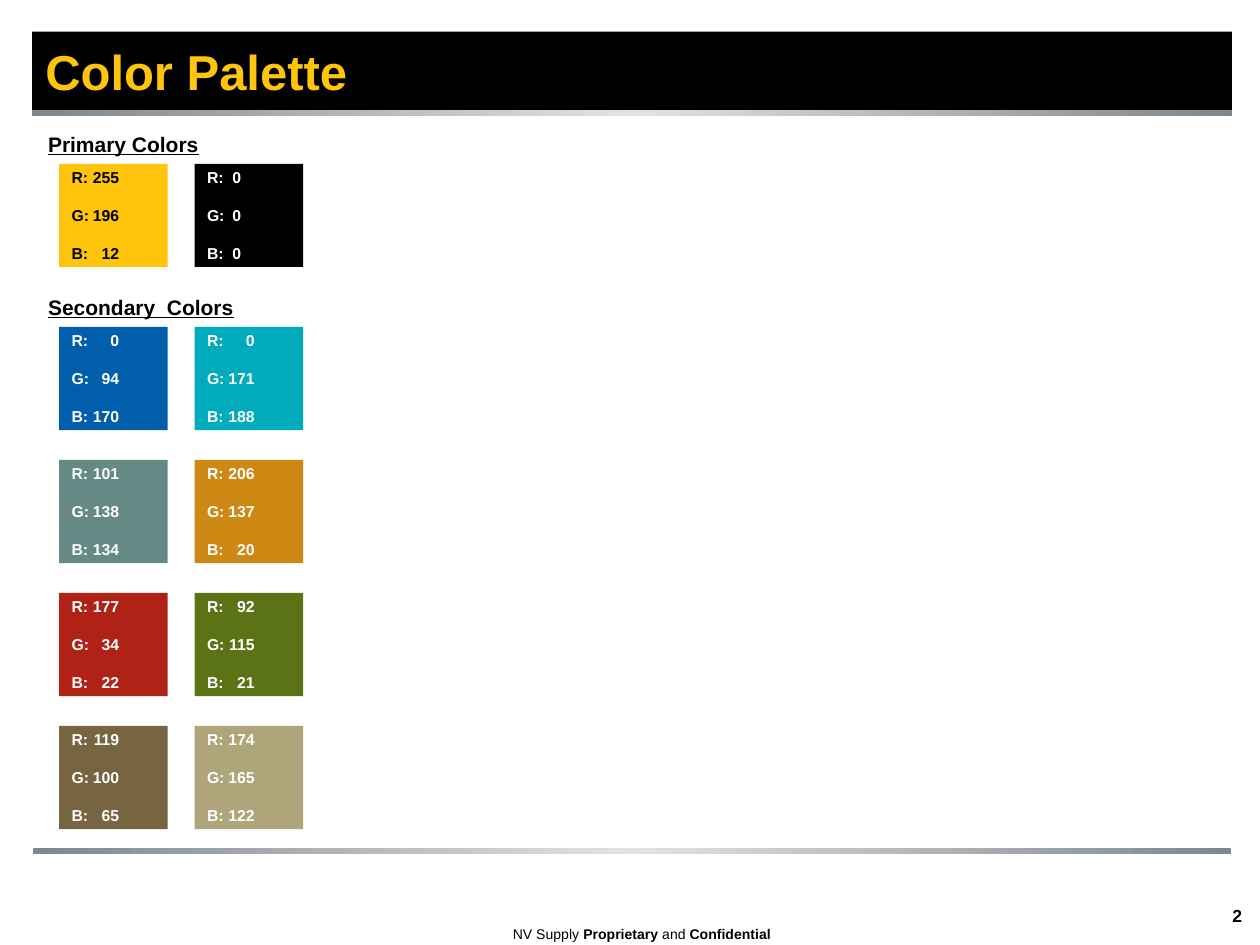
from copy import deepcopy

from lxml import etree
from pptx import Presentation
from pptx import util as u
from pptx.dml.color import RGBColor
from pptx.enum import shapes, text
from pptx.oxml.ns import qn

Pt = u.Pt
ALIGN, ANCHOR = text.PP_ALIGN, text.MSO_ANCHOR
YELLOW, BLACK, WHITE = "FFC40C", "000000", "FFFFFF"
SWATCH_WIDTH, SWATCH_HEIGHT = 62, 59
COLUMN_STEP, ROW_STEP = 77.4, 76

PRIMARY = [[YELLOW, BLACK]]
SECONDARY = [
    ["005EAA", "00ABBC"],
    ["658A86", "CE8914"],
    ["B12216", "5C7315"],
    ["776441", "AEA57A"],
]


def color(value):
    return RGBColor.from_string(value)


def add_span(para, content, size, ink=BLACK, bold=False, underline=False):
    span = para.add_run()
    span.text = content
    font = span.font
    font.name, font.size, font.bold = "Arial", Pt(size), bold
    font.underline = underline
    font.color.rgb = color(ink)


def add_box(page, left, top, width, height, align=ALIGN.LEFT, wrap=False):
    """Add a text box and return its first paragraph."""
    box = page.shapes.add_textbox(Pt(left), Pt(top), Pt(width), Pt(height))
    box.text_frame.word_wrap = wrap
    para = box.text_frame.paragraphs[0]
    para.alignment = align
    return para


def add_block(page, left, top, width, height, fill):
    block = page.shapes.add_shape(
        shapes.MSO_SHAPE.RECTANGLE, Pt(left), Pt(top), Pt(width), Pt(height))
    block.shadow.inherit = False
    block.line.fill.background()
    block.fill.solid()
    block.fill.fore_color.rgb = color(fill)
    return block


def add_silver_rule(page, left, top, width, height):
    rule = add_block(page, left, top, width, height, WHITE)
    rule.fill.gradient()
    rule.fill.gradient_angle = 0
    first, last = rule.fill.gradient_stops
    for stop, position in ((first, 0), (last, 1)):
        stop.color.rgb = color("7E878E")
        stop.position = position
    stops = rule.element.spPr.find(".//" + qn("a:gsLst"))
    middle = deepcopy(stops[0])
    middle.set("pos", "50000")
    middle.find(qn("a:srgbClr")).set("val", "E1E2E3")
    stops.insert(1, middle)


def add_header(page, left, top, width, height):
    add_block(page, left, top, width, height, BLACK)
    add_silver_rule(page, left, top + height - 0.5, width, 3.6)
    title = page.shapes.title
    title.element.getparent().append(title.element)
    title.left, title.top = Pt(left + 0.3), Pt(top)
    title.width, title.height = Pt(525), Pt(height)
    frame = title.text_frame
    frame.vertical_anchor = ANCHOR.MIDDLE
    para = frame.paragraphs[0]
    para.alignment = ALIGN.LEFT
    add_span(para, "Color Palette", 28, YELLOW, bold=True)


def add_footer(page, left, top, width):
    add_silver_rule(page, left, top, width, 3.6)
    number = add_box(page, left + 530, top + 29.2, 168, 25, ALIGN.RIGHT, wrap=True)
    add_span(number, "2", 10, bold=True)
    notice = add_box(page, left + 267, top + 42.5, 162, 15, ALIGN.CENTER)
    notice.line_spacing = 0.85
    for content, bold in (("NV Supply ", False), ("Proprietary", True),
                          (" and ", False), ("Confidential", True)):
        add_span(notice, content, 8, bold=bold)


def add_swatch(page, left, top, fill):
    """Add a colour block that lists its own red, green and blue values."""
    swatch = add_block(page, left, top, SWATCH_WIDTH, SWATCH_HEIGHT, fill)
    frame = swatch.text_frame
    frame.word_wrap = True
    frame.vertical_anchor = ANCHOR.MIDDLE
    frame.margin_top = frame.margin_bottom = 0
    ink = BLACK if fill == YELLOW else WHITE
    number_edge = 19.5 if fill == BLACK else 27.2
    for index, (channel, value) in enumerate(zip("RGB", color(fill))):
        para = frame.add_paragraph() if index else frame.paragraphs[0]
        para.alignment = ALIGN.LEFT
        if index:
            para.space_before = Pt(10.9)
        tabs = etree.SubElement(para._p.get_or_add_pPr(), qn("a:tabLst"))
        etree.SubElement(tabs, qn("a:tab"), pos=str(Pt(number_edge)), algn="r")
        add_span(para, f"{channel}:\t{value}", 9, ink, bold=True)


def add_palette(page, left, top, width, heading, rows):
    para = add_box(page, left, top, width, 20, wrap=True)
    add_span(para, heading, 12, bold=True, underline=True)
    for row, fills in enumerate(rows):
        for column, fill in enumerate(fills):
            add_swatch(page, left + 13.4 + column * COLUMN_STEP,
                       top + 22 + row * ROW_STEP, fill)


def main():
    deck = Presentation()
    deck.slide_width, deck.slide_height = Pt(720), Pt(540)
    page = deck.slides.add_slide(deck.slide_layouts[5])
    add_header(page, 18.4, 18, 685.6, 45.2)
    add_footer(page, 18.8, 484.5, 684.6)
    add_palette(page, 20.4, 71.6, 130, "Primary Colors", PRIMARY)
    add_palette(page, 20.4, 164.8, 130, "Secondary  Colors", SECONDARY)
    deck.save("out.pptx")


if __name__ == "__main__":
    main()
